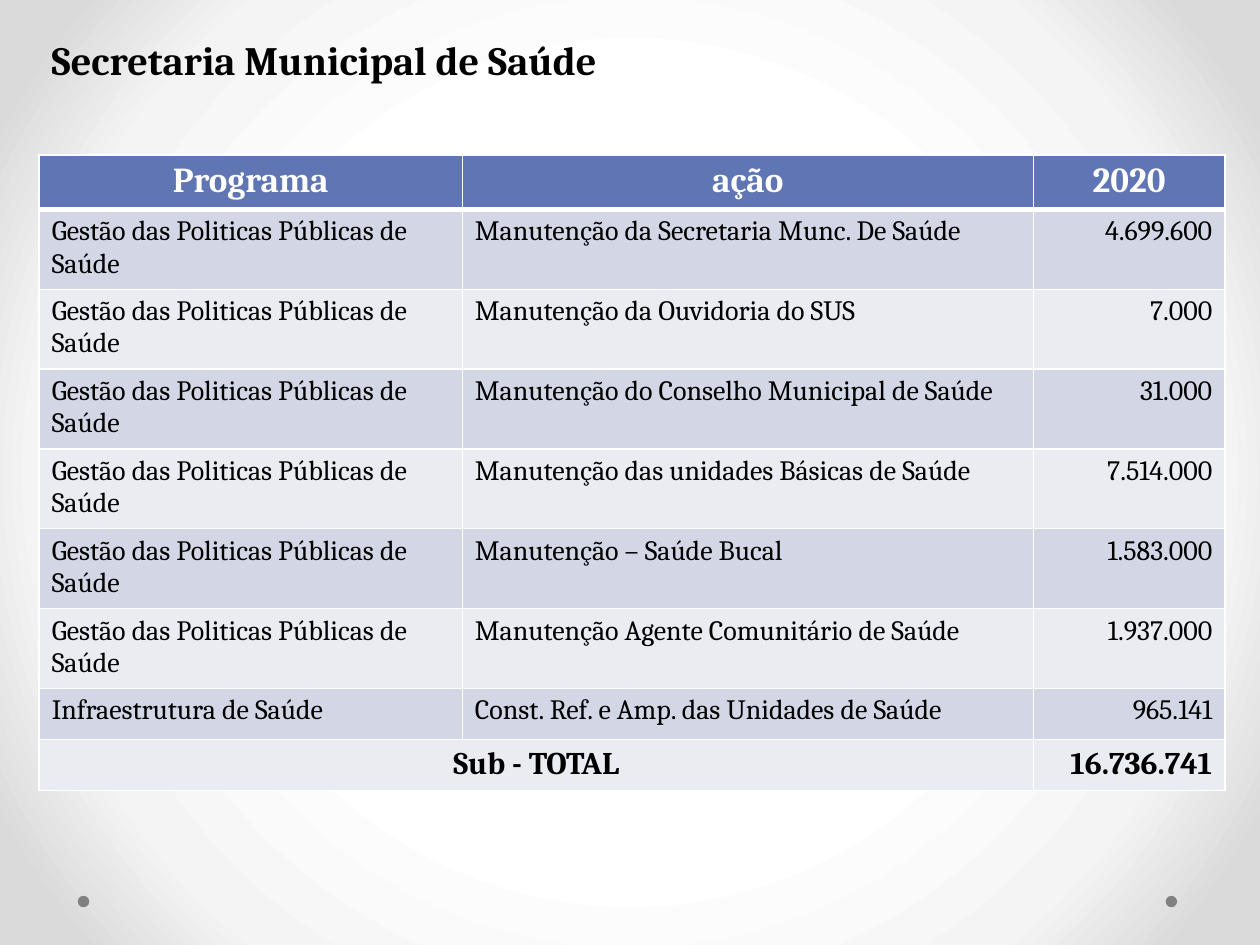
from pptx import Presentation
from pptx import util as u
from pptx.dml.color import RGBColor
from pptx.enum import shapes, text
from pptx.oxml import parse_xml
from pptx.oxml.ns import nsdecls

FONT = "Cambria"
LEFT, CENTER, RIGHT, JUSTIFY = (
    text.PP_ALIGN.LEFT, text.PP_ALIGN.CENTER, text.PP_ALIGN.RIGHT, text.PP_ALIGN.JUSTIFY)
MANAGEMENT = "Gestão das Politicas Públicas de Saúde"
HEADER = ("Programa", "ação", "2020")
ACTIONS = [
    (MANAGEMENT, "Manutenção da Secretaria Munc. De Saúde", "4.699.600"),
    (MANAGEMENT, "Manutenção da Ouvidoria do SUS", "7.000"),
    (MANAGEMENT, "Manutenção do Conselho Municipal de Saúde", "31.000"),
    (MANAGEMENT, "Manutenção das unidades Básicas de Saúde", "7.514.000"),
    (MANAGEMENT, "Manutenção – Saúde Bucal", "1.583.000"),
    (MANAGEMENT, "Manutenção Agente Comunitário de Saúde", "1.937.000"),
    ("Infraestrutura de Saúde", "Const. Ref. e Amp. das Unidades de Saúde", "965.141"),
]
TOTAL = ("Sub - TOTAL", "", "16.736.741")


def paint(fill, color):
    """Fill with one solid colour given as a hex string."""
    fill.solid()
    fill.fore_color.rgb = RGBColor.from_string(color)


def write(tf, content, size, color="000000", bold=False, align=LEFT):
    """Write one formatted run in the first paragraph."""
    p = tf.paragraphs[0]
    p.alignment = align
    r = p.add_run()
    r.text = content
    r.font.name, r.font.size, r.font.bold = FONT, u.Pt(size), bold
    paint(r.font.fill, color)


def add_background(s):
    """Give the slide a radial gradient from white to grey."""
    stops = "".join(
        f'<a:gs pos="{pos * 1000}"><a:srgbClr val="{color}"/></a:gs>'
        for pos, color in ((50, "FFFFFF"), (76, "F4F4F4"), (92, "DADADA")))
    s.element.cSld.insert(0, parse_xml(
        f'<p:bg {nsdecls("p", "a")}><p:bgPr><a:gradFill rotWithShape="1">'
        f'<a:gsLst>{stops}</a:gsLst><a:path path="circle">'
        '<a:fillToRect l="50000" t="50000" r="50000" b="50000"/></a:path>'
        '</a:gradFill><a:effectLst/></p:bgPr></p:bg>'))


def add_dots(s, left, top, width, size):
    """Place a grey dot at each end of the given strip."""
    for x in (left, left + width - size):
        sp = s.shapes.add_shape(
            shapes.MSO_SHAPE.OVAL, u.Cm(x), u.Cm(top), u.Cm(size), u.Cm(size))
        sp.shadow.inherit = False
        paint(sp.fill, "808080")
        sp.line.fill.background()


def add_title(s, left, top, width, height):
    """Place the name of the department."""
    tf = s.shapes.add_textbox(u.Cm(left), u.Cm(top), u.Cm(width), u.Cm(height)).text_frame
    tf.word_wrap = True
    tf.auto_size = text.MSO_AUTO_SIZE.SHAPE_TO_FIT_TEXT
    write(tf, "Secretaria Municipal de Saúde", 23, bold=True)


def add_borders(cell, bottom):
    """Draw white cell borders, the lower one with its own width."""
    tcPr = cell._tc.get_or_add_tcPr()
    for side, width in (("L", 1), ("R", 1), ("T", 1), ("B", bottom)):
        tcPr.append(parse_xml(
            f'<a:ln{side} {nsdecls("a")} w="{u.Pt(width)}"><a:solidFill>'
            f'<a:srgbClr val="FFFFFF"/></a:solidFill></a:ln{side}>'))


def add_budget(s, left, top, col_widths, row_height):
    """Build the budget table with a header, banded rows and a total."""
    rows = [HEADER, *ACTIONS, TOTAL]
    last = len(rows) - 1
    table = s.shapes.add_table(
        len(rows), len(col_widths), u.Cm(left), u.Cm(top),
        u.Cm(sum(col_widths)), u.Cm(row_height * len(rows))).table
    for column, width in zip(table.columns, col_widths):
        column.width = u.Cm(width)
    for i, row in enumerate(rows):
        table.rows[i].height = u.Cm(row_height)
        if i == 0:
            style = dict(size=20, color="FFFFFF", bold=True)
            aligns = (CENTER,) * 3
        elif i == last:
            style = dict(size=18, bold=True)
            aligns = (CENTER, CENTER, RIGHT)
        else:
            style = dict(size=16)
            aligns = (LEFT, JUSTIFY, RIGHT)
        band = "6076B4" if i == 0 else ("EAECF2", "D2D6E5")[i % 2]
        for j, (content, align) in enumerate(zip(row, aligns)):
            cell = table.cell(i, j)
            add_borders(cell, 3 if i == 0 else 1)
            paint(cell.fill, band)
            if content:
                write(cell.text_frame, content, align=align, **style)
    table.cell(last, 0).merge(table.cell(last, 1))


def main():
    """Build and save the slide."""
    prs = Presentation()
    prs.slide_width, prs.slide_height = u.Cm(25.4), u.Cm(19.05)
    s = prs.slides.add_slide(prs.slide_layouts[6])
    add_background(s)
    add_dots(s, 1.57, 18.06, 22.16, 0.23)
    add_title(s, 0.79, 0.58, 21.44, 1.24)
    add_budget(s, 0.79, 3.12, (8.53, 11.51, 3.86), 1.03)
    prs.save("out.pptx")


if __name__ == "__main__":
    main()
